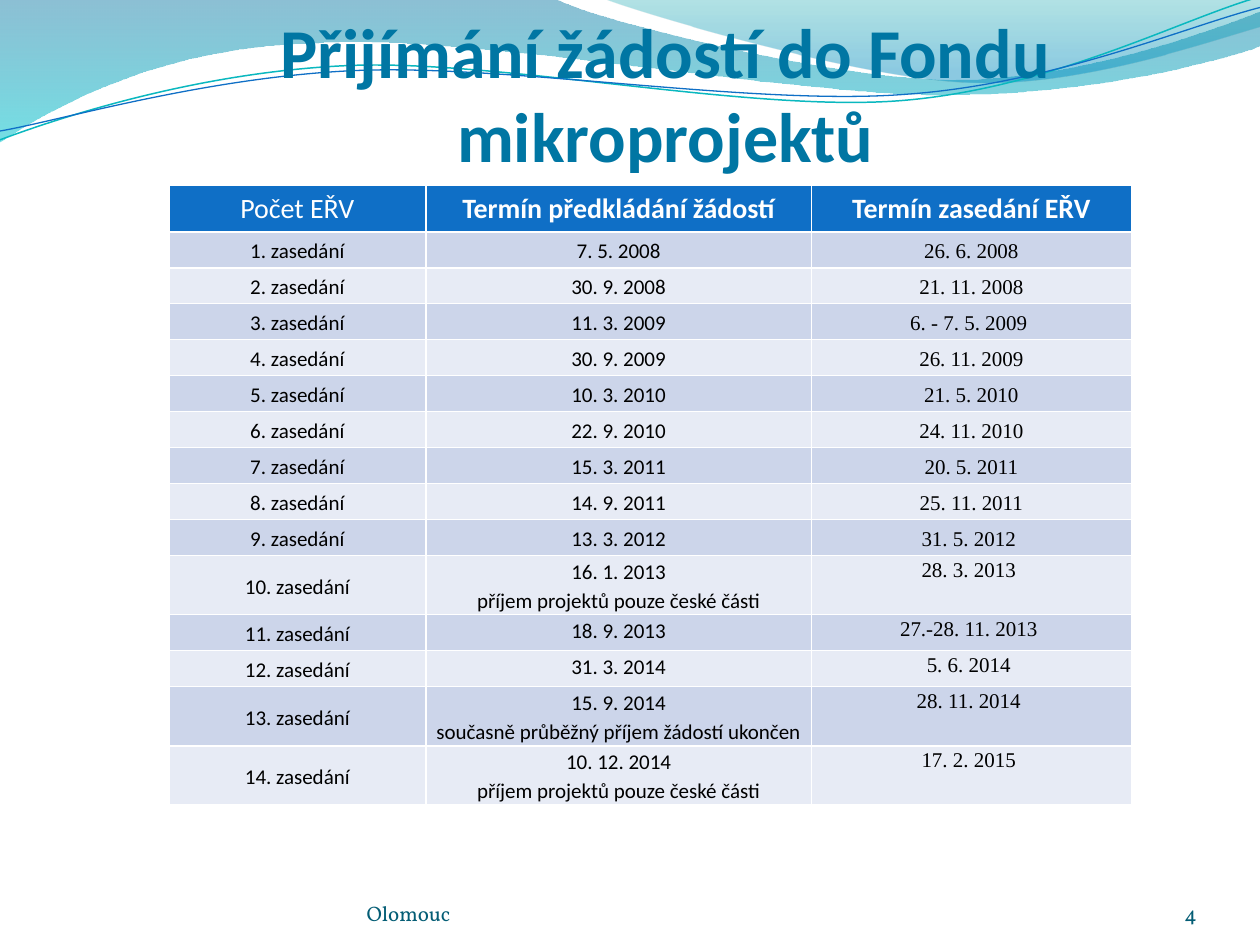
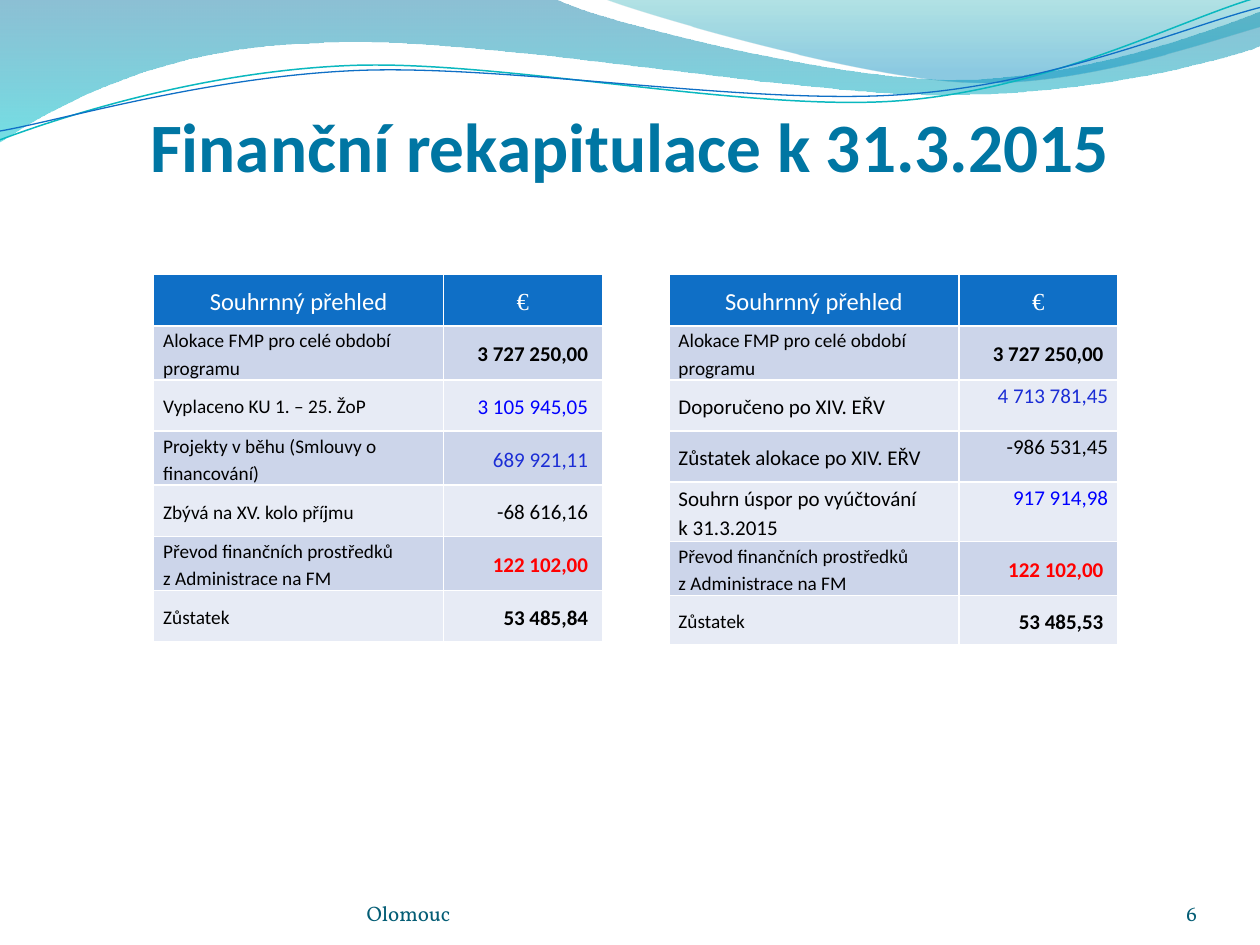
import math
import pptx
import pptx.dml.color
import pptx.enum.text
import pptx.oxml
import pptx.oxml.ns
import pptx.util
from dataclasses import dataclass
from lxml import etree

Inches = pptx.util.Inches
Pt = pptx.util.Pt
qn = pptx.oxml.ns.qn
ALIGN = pptx.enum.text.PP_ALIGN
ANCHOR = pptx.enum.text.MSO_ANCHOR


@dataclass(frozen=True)
class Theme:
    sans: str = "Calibri"
    serif: str = "Times New Roman"
    footer_font: str = "Vollkorn"
    title: str = "0076A3"
    footer: str = "045D75"
    header: str = "0F6FC6"
    bands: tuple = ("CCD5EA", "E7EBF5")
    white: str = "FFFFFF"
    black: str = "000000"
    blue: str = "0000FF"
    indigo: str = "1B2DD5"
    red: str = "FF0000"
    teal: str = "0AB8BF"
    header_size: int = 16
    summary_header_size: int = 14
    body_size: int = 12
    label_size: int = 11


THEME = Theme()
HARD_SPACE_MARK, HARD_SPACE = "~", chr(160)

TITLES = {
    "calls": dict(text="Přijímání žádostí do Fondu mikroprojektů",
                  box=(0.78, 0.7, 9, 1.36), size=40, bottom=0.66),
    "finance": dict(text="Finanční rekapitulace k 31.3.2015",
                    box=(0.5, 0.77, 9, 1.25), size=39.6, bottom=0.54),
}
FOOTER_TEXT = "Olomouc"

CALL_HEADERS = ("Počet EŘV", "Termín předkládání žádostí", "Termín zasedání EŘV")
CZECH_ONLY = "\npříjem projektů pouze české části"
CALLS = [
    ("7. 5. 2008", "26. 6. 2008"),
    ("30. 9. 2008", "21. 11. 2008"),
    ("11. 3. 2009", "6. - 7. 5. 2009 "),
    ("30. 9. 2009", "26. 11. 2009"),
    ("10. 3. 2010", "21. 5. 2010"),
    ("22. 9. 2010", "24. 11. 2010"),
    ("15. 3. 2011", "20. 5. 2011"),
    ("14. 9. 2011", "25. 11. 2011"),
    ("13. 3. 2012", "31. 5. 2012 "),
    ("16. 1. 2013" + CZECH_ONLY, "28. 3. 2013 "),
    ("18. 9. 2013", "27.-28. 11. 2013 "),
    ("31. 3. 2014", "5. 6. 2014 "),
    ("15. 9. 2014\nsoučasně průběžný příjem žádostí ukončen", "28. 11. 2014 "),
    ("10. 12. 2014" + CZECH_ONLY, "17. 2. 2015 "),
]
CALLS_LEFT, CALLS_TOP, CALLS_HEIGHT = 1.34, 1.47, 4.92
CALL_COLUMNS = (2.04, 3.06, 2.54)
CALL_HEADER_HEIGHT, TWO_LINE_HEIGHT = 0.37, 0.47
FIRST_TOP_ALIGNED_CALL = 10

SUMMARY_HEADERS = (("Souhrnný přehled", THEME.sans), ("€", THEME.serif))
STRONG = dict(bold=True)
TOP = dict(anchor=ANCHOR.TOP)
LARGE = dict(size=THEME.body_size)
ALLOCATION = ("Alokace FMP pro celé období programu", {}, "3 727 250,00 ", STRONG)
TRANSFER = ("Převod finančních prostředků z~Administrace na FM", {},
            "122~102,00 ", dict(bold=True, color=THEME.red))
PAID_SUMMARY = [
    ALLOCATION,
    ("Vyplaceno KU 1. – 25. ŽoP", {}, "3~105~945,05 ", dict(color=THEME.blue)),
    ("Projekty v~běhu (Smlouvy o financování)", {}, "689~921,11 ", dict(color=THEME.indigo)),
    ("Zbývá na XV. kolo příjmu", {}, "-68~616,16 ", {}),
    TRANSFER,
    ("Zůstatek", {}, "53~485,84 ", STRONG),
]
RECOMMENDED_SUMMARY = [
    ALLOCATION,
    ("Doporučeno po XIV. EŘV", LARGE, "4~713~781,45", dict(color=THEME.indigo, **TOP)),
    ("Zůstatek alokace po XIV. EŘV", LARGE, "-986~531,45", TOP),
    ("Souhrn úspor po~vyúčtování k~31.3.2015", LARGE, "917~914,98",
     dict(color=THEME.blue, **TOP)),
    TRANSFER,
    ("Zůstatek", {}, "53~485,53 ", STRONG),
]
SUMMARY_COLUMNS = (2.3, 1.26)
SUMMARY_TOP = 2.18
SUMMARY_INSET = 5.4 / 72
ONE_LINE, TWO_LINES = 2.84 / 7, 0.43
SUMMARIES = [
    (1.22, PAID_SUMMARY, [ONE_LINE] + [TWO_LINES, ONE_LINE] * 3),
    (5.31, RECOMMENDED_SUMMARY,
     [ONE_LINE, TWO_LINES, ONE_LINE, ONE_LINE, TWO_LINE_HEIGHT, TWO_LINES, 0.39]),
]

WAVES = [
    dict(start=(0, 0), gradient=((0, "0074A1", 45), (100, "00C6CF", 55)), segments=[
        (4.4, -0.01), (4.76, 0.17, 6.64, 0.63, 7.58, 0.63), (8.53, 0.63, 9.58, 0.26, 10, 0.09),
        (10.01, 0.36), (9.83, 0.44, 8.7, 0.76, 7.46, 0.75), (6.22, 0.75, 3.82, 0.28, 2.57, 0.34),
        (1.29, 0.36, 0.46, 0.83, -0.01, 1.13), (0, 0)]),
    dict(start=(4.79, -0.01), gradient=((0, "00A1A9", 30), (80, "008BBF", 45)), segments=[
        (5.09, 0.11, 6.82, 0.62, 7.69, 0.65), (8.56, 0.69, 9.61, 0.32, 10, 0.21),
        (10, 0), (4.79, -0.01)]),
    dict(start=(0, 1.11), line=(THEME.teal, 0.85), pivot=(4.99, 0.575), segments=[
        (0.48, 0.93, 1.58, 0.57, 2.77, 0.52), (3.95, 0.47, 5.93, 0.89, 7.13, 0.8),
        (8.33, 0.71, 9.38, 0.15, 9.98, -0.02)]),
    dict(start=(0, 1.04), line=(THEME.header, 0.75), pivot=(5, 0.59), segments=[
        (0.47, 0.96, 1.64, 0.61, 2.83, 0.56), (4.03, 0.51, 5.97, 0.84, 7.17, 0.75),
        (8.36, 0.67, 9.41, 0.21, 10, 0.06)]),
]
WAVE_TILT = 2.7


def rgb(value):
    return pptx.dml.color.RGBColor.from_string(value)


def line_element(tag, color, width):
    return pptx.oxml.parse_xml(
        f'<{tag} xmlns:a="http://schemas.openxmlformats.org/drawingml/2006/main" w="{Pt(width)}">'
        f'<a:solidFill><a:srgbClr val="{color}"/></a:solidFill></{tag}>')


def write_text(frame, text, size=THEME.body_size, font=THEME.sans, color=THEME.black,
               bold=False, align=ALIGN.LEFT, spacing=None, outline=None):
    paragraph = frame.paragraphs[0]
    paragraph.alignment = align
    if spacing:
        paragraph.line_spacing = spacing
    for index, line in enumerate(text.replace(HARD_SPACE_MARK, HARD_SPACE).split("\n")):
        if index:
            paragraph.add_line_break()
        run = paragraph.add_run()
        run.text = line
        run.font.size, run.font.name, run.font.bold = Pt(size), font, bold
        run.font.color.rgb = rgb(color)
        if outline:
            run.font._element.insert(0, line_element("a:ln", *outline))


def add_text_box(slide, box, text, insets=(0, 0, 0, 0), **text_format):
    shape = slide.shapes.add_textbox(*map(Inches, box))
    frame = shape.text_frame
    frame.word_wrap = True
    frame.vertical_anchor = ANCHOR.BOTTOM
    (frame.margin_left, frame.margin_top,
     frame.margin_right, frame.margin_bottom) = map(Inches, insets)
    write_text(frame, text, **text_format)


def turn(point, pivot):
    angle = math.radians(WAVE_TILT)
    x, y = point[0] - pivot[0], point[1] - pivot[1]
    return (pivot[0] + x * math.cos(angle) - y * math.sin(angle),
            pivot[1] + x * math.sin(angle) + y * math.cos(angle))


def bend_segments(shape, segments):
    lines = iter(list(shape._element.iter(qn("a:lnTo"))))
    for segment in segments:
        group = [next(lines) for _ in range(len(segment) // 2)]
        if len(group) == 1:
            continue
        curve = etree.Element(qn("a:cubicBezTo"))
        group[0].addprevious(curve)
        for line in group:
            curve.append(line[0])
            line.getparent().remove(line)


def add_wave(slide, start, segments, gradient=None, line=None, pivot=None):
    points = [start] + [segment[i:i + 2] for segment in segments
                        for i in range(0, len(segment), 2)]
    if pivot:
        points = [turn(point, pivot) for point in points]
    points = [(Inches(x), Inches(y)) for x, y in points]
    builder = slide.shapes.build_freeform(*points[0])
    builder.add_line_segments(points[1:], close=bool(gradient))
    shape = builder.convert_to_shape()
    bend_segments(shape, segments)
    shape.shadow.inherit = False
    if line:
        shape.rotation = 360 - WAVE_TILT
        shape.fill.background()
        shape.line.color.rgb = rgb(line[0])
        shape.line.width = Pt(line[1])
        return
    shape.line.fill.background()
    shape.fill.gradient()
    shape.fill.gradient_angle = 270
    for stop, (position, color, _) in zip(shape.fill.gradient_stops, gradient):
        stop.position = position / 100
        stop.color.rgb = rgb(color)
    colors = list(shape._element.spPr.iter(qn("a:srgbClr")))
    for element, (_, _, opacity) in zip(colors, gradient):
        etree.SubElement(element, qn("a:alpha")).set("val", str(opacity * 1000))


def add_grid(slide, left, top, columns, heights):
    table = slide.shapes.add_table(len(heights), len(columns), Inches(left), Inches(top),
                                   Inches(sum(columns)), Inches(sum(heights))).table
    for column, width in zip(table.columns, columns):
        column.width = Inches(width)
    for row, height in zip(table.rows, heights):
        row.height = Inches(height)
    return table


def fill_cell(table, row, column, text, insets=(0, 0), anchor=ANCHOR.MIDDLE, **text_format):
    cell = table.cell(row, column)
    cell.margin_left = cell.margin_right = Inches(insets[0])
    cell.margin_top = cell.margin_bottom = Inches(insets[1])
    cell.vertical_anchor = anchor
    write_text(cell.text_frame, text, **text_format)
    properties = cell._tc.get_or_add_tcPr()
    for side in "LRTB":
        properties.append(line_element(f"a:ln{side}", THEME.white, 1))
    cell.fill.solid()
    cell.fill.fore_color.rgb = rgb(THEME.bands[(row - 1) % 2] if row else THEME.header)


def add_calls_table(slide):
    double = ["\n" in deadline for deadline, _ in CALLS]
    single_height = ((CALLS_HEIGHT - CALL_HEADER_HEIGHT - TWO_LINE_HEIGHT * sum(double))
                     / double.count(False))
    heights = [CALL_HEADER_HEIGHT] + [TWO_LINE_HEIGHT if two else single_height for two in double]
    table = add_grid(slide, CALLS_LEFT, CALLS_TOP, CALL_COLUMNS, heights)
    for column, header in enumerate(CALL_HEADERS):
        fill_cell(table, 0, column, header, insets=(0.1, 0.05), anchor=ANCHOR.TOP,
                  size=THEME.header_size, color=THEME.white, bold=column > 0, align=ALIGN.CENTER)
    for number, (deadline, meeting) in enumerate(CALLS, 1):
        date_anchor = ANCHOR.TOP if number >= FIRST_TOP_ALIGNED_CALL else ANCHOR.MIDDLE
        cells = ((f"{number}. zasedání", THEME.sans, ANCHOR.MIDDLE),
                 (deadline, THEME.sans, date_anchor), (meeting, THEME.serif, date_anchor))
        for column, (text, font, anchor) in enumerate(cells):
            fill_cell(table, number, column, text, font=font, anchor=anchor,
                      align=ALIGN.CENTER, spacing=1.15)


def add_summary_table(slide, left, entries, heights):
    table = add_grid(slide, left, SUMMARY_TOP, SUMMARY_COLUMNS, heights)
    shared = dict(insets=(SUMMARY_INSET, 0), spacing=1.15)
    for column, (header, font) in enumerate(SUMMARY_HEADERS):
        fill_cell(table, 0, column, header, font=font, size=THEME.summary_header_size,
                  color=THEME.white, align=ALIGN.CENTER, **shared)
    for row, (label, label_format, amount, amount_format) in enumerate(entries, 1):
        fill_cell(table, row, 0, label, **{"size": THEME.label_size, **shared, **label_format})
        fill_cell(table, row, 1, amount, align=ALIGN.RIGHT, **shared, **amount_format)


def add_base_slide(presentation, title, number):
    slide = presentation.slides.add_slide(presentation.slide_layouts[6])
    for wave in WAVES:
        add_wave(slide, **wave)
    add_text_box(slide, title["box"], title["text"], insets=(0, 0.05, 0, title["bottom"]),
                 size=title["size"], color=THEME.title, bold=True, align=ALIGN.CENTER,
                 outline=(THEME.white, 1.45))
    footer = dict(font=THEME.footer_font, color=THEME.footer)
    add_text_box(slide, (2.91, 6.95, 3.67, 0.4), FOOTER_TEXT, **footer)
    add_text_box(slide, (8.67, 6.95, 0.83, 0.4), str(number), align=ALIGN.RIGHT, **footer)
    return slide


def main():
    presentation = pptx.Presentation()
    presentation.slide_width, presentation.slide_height = Inches(10), Inches(7.5)
    add_calls_table(add_base_slide(presentation, TITLES["calls"], 4))
    finance_slide = add_base_slide(presentation, TITLES["finance"], 6)
    for summary in SUMMARIES:
        add_summary_table(finance_slide, *summary)
    presentation.save("out.pptx")


if __name__ == "__main__":
    main()
